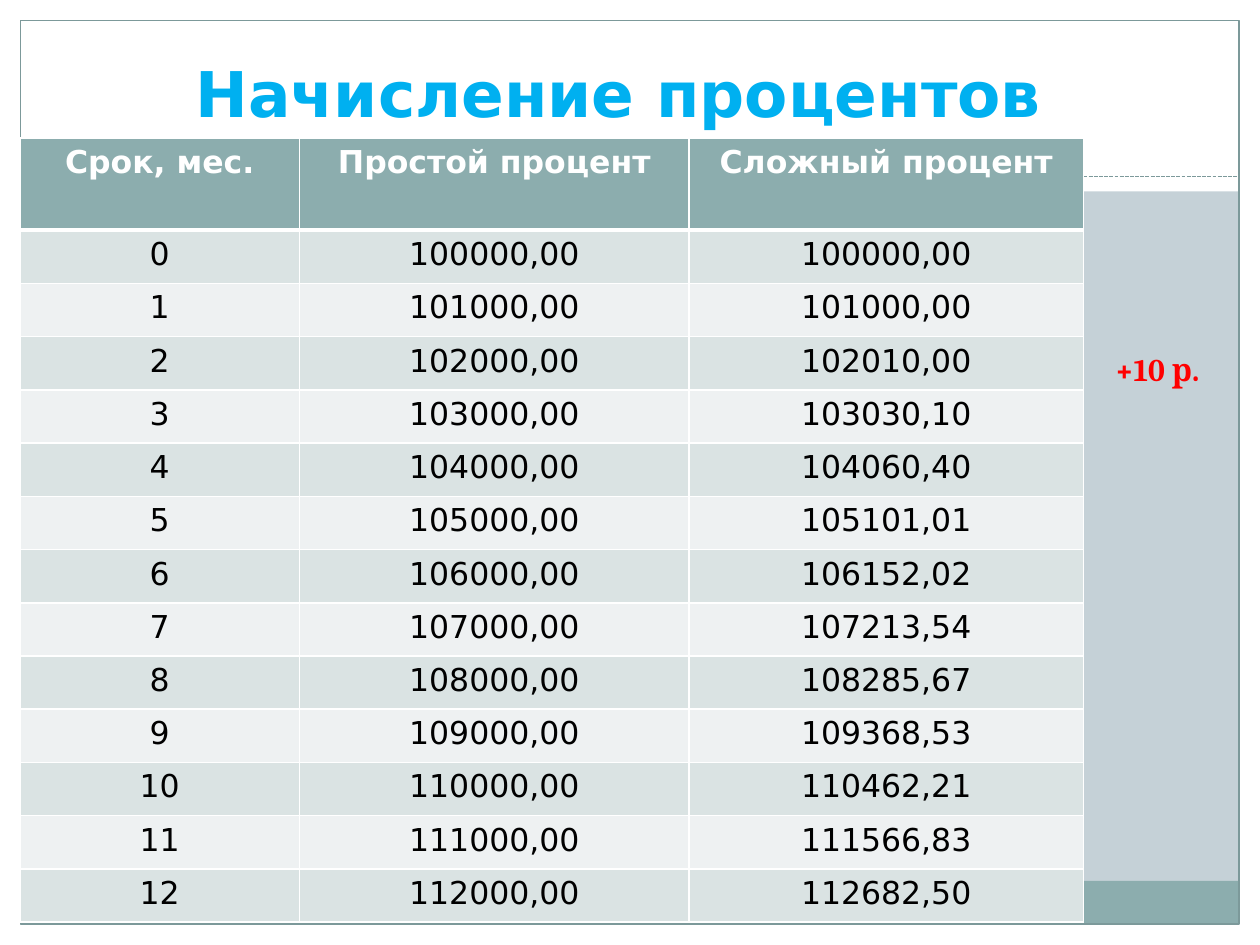
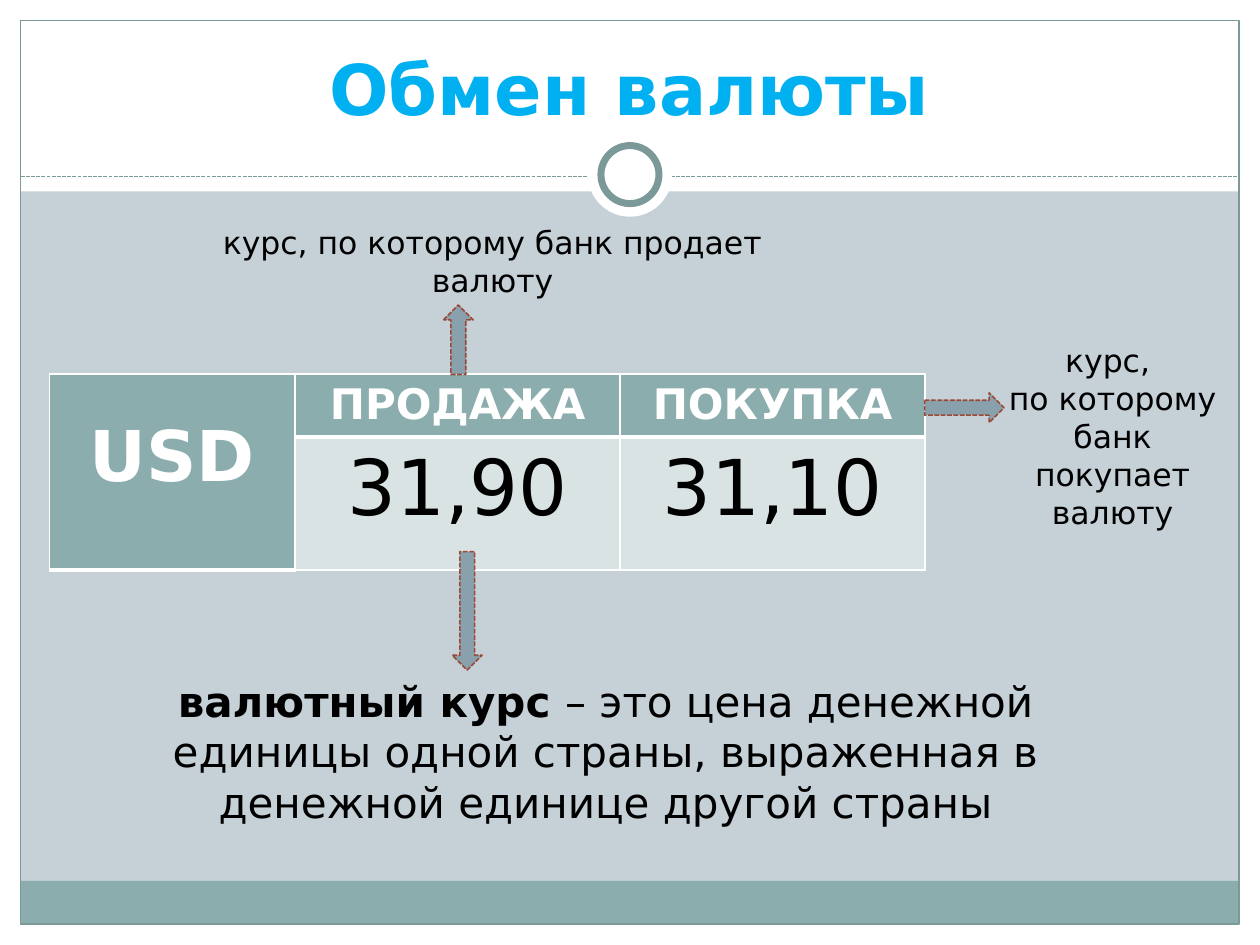
import dataclasses

import lxml.etree
import pptx
import pptx.dml.color
import pptx.enum.dml
import pptx.enum.shapes
import pptx.enum.text
import pptx.oxml.ns
import pptx.util

Cm = pptx.util.Cm
Pt = pptx.util.Pt
SHAPES = pptx.enum.shapes.MSO_SHAPE
ALIGN = pptx.enum.text.PP_ALIGN
ANCHOR = pptx.enum.text.MSO_ANCHOR


@dataclasses.dataclass(frozen=True)
class Theme:
    # Colours
    paper: str = "C5D1D7"
    white: str = "FFFFFF"
    black: str = "000000"
    teal: str = "8CADAE"
    outline: str = "7C999A"
    odd_row: str = "DAE3E3"
    even_row: str = "EEF1F2"
    heading: str = "00B0F0"
    accent: str = "FF0000"
    arrow: str = "88A1AD"
    arrow_edge: str = "9B4936"
    # Fonts and type sizes
    font: str = "DejaVu Sans"
    note_font: str = "Cambria"
    body: int = 18
    large: int = 24
    title: int = 36
    big_title: int = 40
    rate: int = 44


@dataclasses.dataclass(frozen=True)
class Box:
    """A region in centimetres."""
    left: float
    top: float
    width: float
    height: float

    def inner(self, left, top, width, height):
        return Box(self.left + left, self.top + top, width, height)

    def emu(self):
        return Cm(self.left), Cm(self.top), Cm(self.width), Cm(self.height)


THEME = Theme()
PAGE = Box(0, 0, 25.4, 19.05)
MARGIN = 0.42


def rgb(code):
    return pptx.dml.color.RGBColor.from_string(code)


def write(frame, *paragraphs, size=THEME.body, color=THEME.black, bold=False,
          font=THEME.font, align=ALIGN.CENTER):
    """Fill a text frame; a paragraph is a string or a list of (text, bold)."""
    for index, content in enumerate(paragraphs):
        paragraph = frame.add_paragraph() if index else frame.paragraphs[0]
        paragraph.alignment = align
        pieces = [(content, bold)] if isinstance(content, str) else content
        for text, weight in pieces:
            run = paragraph.add_run()
            run.text = text
            run.font.name = font
            run.font.size = Pt(size)
            run.font.bold = weight
            run.font.color.rgb = rgb(color)


def add_text(slide, box, *paragraphs, anchor=ANCHOR.TOP, **style):
    frame = slide.shapes.add_textbox(*box.emu()).text_frame
    frame.word_wrap = True
    frame.vertical_anchor = anchor
    write(frame, *paragraphs, **style)


def set_line(line, color, width, dashed=False):
    line.color.rgb = rgb(color)
    line.width = Pt(width)
    if dashed:
        line.dash_style = pptx.enum.dml.MSO_LINE.SQUARE_DOT


def add_figure(slide, kind, box, fill=None, edge=None, width=0.75, dashed=False):
    figure = slide.shapes.add_shape(kind, *box.emu())
    figure.shadow.inherit = False
    if fill:
        figure.fill.solid()
        figure.fill.fore_color.rgb = rgb(fill)
    else:
        figure.fill.background()
    if edge:
        set_line(figure.line, edge, width, dashed)
    else:
        figure.line.fill.background()


def set_borders(cell, bottom):
    properties = cell._tc.get_or_add_tcPr()
    qn = pptx.oxml.ns.qn
    for side, width in (("L", 1), ("R", 1), ("T", 1), ("B", bottom)):
        border = lxml.etree.SubElement(properties, qn(f"a:ln{side}"), w=str(Pt(width)))
        fill = lxml.etree.SubElement(border, qn("a:solidFill"))
        lxml.etree.SubElement(fill, qn("a:srgbClr"), val=THEME.white)


def style_cell(cell, fill, bottom=1):
    set_borders(cell, bottom)
    cell.fill.solid()
    cell.fill.fore_color.rgb = rgb(fill)


def add_grid(slide, box, columns, rows):
    grid = slide.shapes.add_table(len(rows), len(columns), *box.emu()).table
    grid.horz_banding = False
    for column, width in zip(grid.columns, columns):
        column.width = Cm(width)
    for row, height in zip(grid.rows, rows):
        row.height = Cm(height)
    return grid


def draw_frame(slide, page):
    """White margins, footer band, outline and the ring on the dashed rule."""
    right, bottom = page.width - MARGIN, page.height - MARGIN
    inside = page.width - 2 * MARGIN
    rule_top, middle = 3.56, page.width / 2

    # Margins and header
    for band in ((0, bottom, page.width, MARGIN), (0, 0, page.width, 3.86),
                 (0, 0, MARGIN, page.height), (right, 0, MARGIN, page.height)):
        add_figure(slide, SHAPES.RECTANGLE, page.inner(*band), THEME.white)

    # Footer and outline
    footer = page.inner(MARGIN, bottom - 0.87, inside, 0.87)
    add_figure(slide, SHAPES.RECTANGLE, footer, THEME.teal)
    border = page.inner(MARGIN, MARGIN, inside, bottom - MARGIN)
    add_figure(slide, SHAPES.RECTANGLE, border, edge=THEME.outline)

    # Dashed rule
    rule = slide.shapes.add_connector(
        pptx.enum.shapes.MSO_CONNECTOR.STRAIGHT,
        Cm(page.left + MARGIN), Cm(page.top + rule_top),
        Cm(page.left + right), Cm(page.top + rule_top))
    set_line(rule.line, THEME.outline, 0.75, dashed=True)
    lxml.etree.SubElement(rule._element.spPr, pptx.oxml.ns.qn("a:effectLst"))

    # Ring
    for size, edge in ((1.7, None), (1.17, THEME.outline)):
        disc = page.inner(middle - size / 2, 3.52 - size / 2, size, size)
        add_figure(slide, SHAPES.OVAL, disc, THEME.white, edge, 4)


def draw_title(slide, page, text, size):
    add_text(slide, page.inner(0.84, 0.64, 23.7, 2.1), text, size=size,
             color=THEME.heading, bold=True, anchor=ANCHOR.BOTTOM)


def money(amount):
    return f"{amount:.2f}".replace(".", ",")


def draw_interest_table(slide, box):
    deposit, rate, months = 100000, 0.01, 12
    rows = [("Срок, мес.", "Простой процент", "Сложный процент")]
    for month in range(months + 1):
        simple = deposit * (1 + rate * month)
        compound = deposit * (1 + rate) ** month
        rows.append((str(month), money(simple), money(compound)))

    header_height = 1.86
    row_height = (box.height - header_height) / (months + 1)
    grid = add_grid(slide, box, (5.64, 7.85, 7.95),
                    [header_height] + [row_height] * (months + 1))
    for index, values in enumerate(rows):
        header = index == 0
        stripe = THEME.odd_row if index % 2 else THEME.even_row
        for column, value in enumerate(values):
            cell = grid.cell(index, column)
            style_cell(cell, THEME.teal if header else stripe, 3 if header else 1)
            write(cell.text_frame, value, bold=header,
                  color=THEME.white if header else THEME.black)


def draw_rate_table(slide, box):
    header_height = 1.24
    grid = add_grid(slide, box, (4.95, 6.55, 6.15),
                    (header_height, box.height - header_height))

    # Currency, over both rows
    currency = grid.cell(0, 0)
    currency.merge(grid.cell(1, 0))
    for row in range(2):
        style_cell(grid.cell(row, 0), THEME.teal, 3)
    currency.margin_top = Cm(0.86)
    write(currency.text_frame, "USD", size=THEME.big_title,
          color=THEME.white, bold=True)

    # Rates
    for column, (label, rate) in enumerate(
            (("ПРОДАЖА", "31,90"), ("ПОКУПКА", "31,10")), start=1):
        header, value = grid.cell(0, column), grid.cell(1, column)
        style_cell(header, THEME.teal, 3)
        write(header.text_frame, label, size=THEME.large,
              color=THEME.white, bold=True)
        style_cell(value, THEME.odd_row)
        write(value.text_frame, rate, size=THEME.rate)


def draw_rate_notes(slide, page):
    add_text(slide, page.inner(3.58, 4.37, 12.7, 1.8),
             "курс, по которому банк продает валюту")
    add_text(slide, page.inner(20.04, 6.76, 4.78, 4.11),
             "курс, ", "по которому банк покупает валюту")
    add_text(slide, page.inner(3.18, 13.49, 18.06, 3.33),
             [("валютный курс ", True),
              ("– это цена денежной единицы одной страны, "
               "выраженная в денежной единице другой страны", False)],
             size=THEME.large)

    # Arrows from the table to its notes
    for kind, place in ((SHAPES.UP_ARROW, (8.94, 6.15, 0.6, 1.4)),
                        (SHAPES.DOWN_ARROW, (9.12, 11.12, 0.6, 2.39)),
                        (SHAPES.RIGHT_ARROW, (18.64, 7.92, 1.6, 0.6))):
        add_figure(slide, kind, page.inner(*place), THEME.arrow,
                   THEME.arrow_edge, 0.9, dashed=True)


def draw_interest_slide(slide, page):
    draw_frame(slide, page)
    draw_title(slide, page, "Начисление процентов ", THEME.title)
    draw_interest_table(slide, page.inner(0.4, 2.78, 21.44, 15.82))
    add_text(slide, page.inner(22.23, 6.93, 3.17, 1.02), "+10 р.",
             font=THEME.note_font, color=THEME.accent, bold=True,
             align=ALIGN.LEFT)


def draw_exchange_slide(slide, page):
    draw_frame(slide, page)
    draw_title(slide, page, "Обмен валюты", THEME.big_title)
    draw_rate_table(slide, page.inner(1, 7.54, 17.65, 3.87))
    draw_rate_notes(slide, page)


def main():
    deck = pptx.Presentation()
    deck.slide_width, deck.slide_height = Cm(PAGE.width), Cm(PAGE.height)
    backdrop = deck.slide_master.background.fill
    backdrop.solid()
    backdrop.fore_color.rgb = rgb(THEME.paper)

    blank = deck.slide_layouts[6]
    for draw_slide in (draw_interest_slide, draw_exchange_slide):
        draw_slide(deck.slides.add_slide(blank), PAGE)
    deck.save("out.pptx")


if __name__ == "__main__":
    main()
